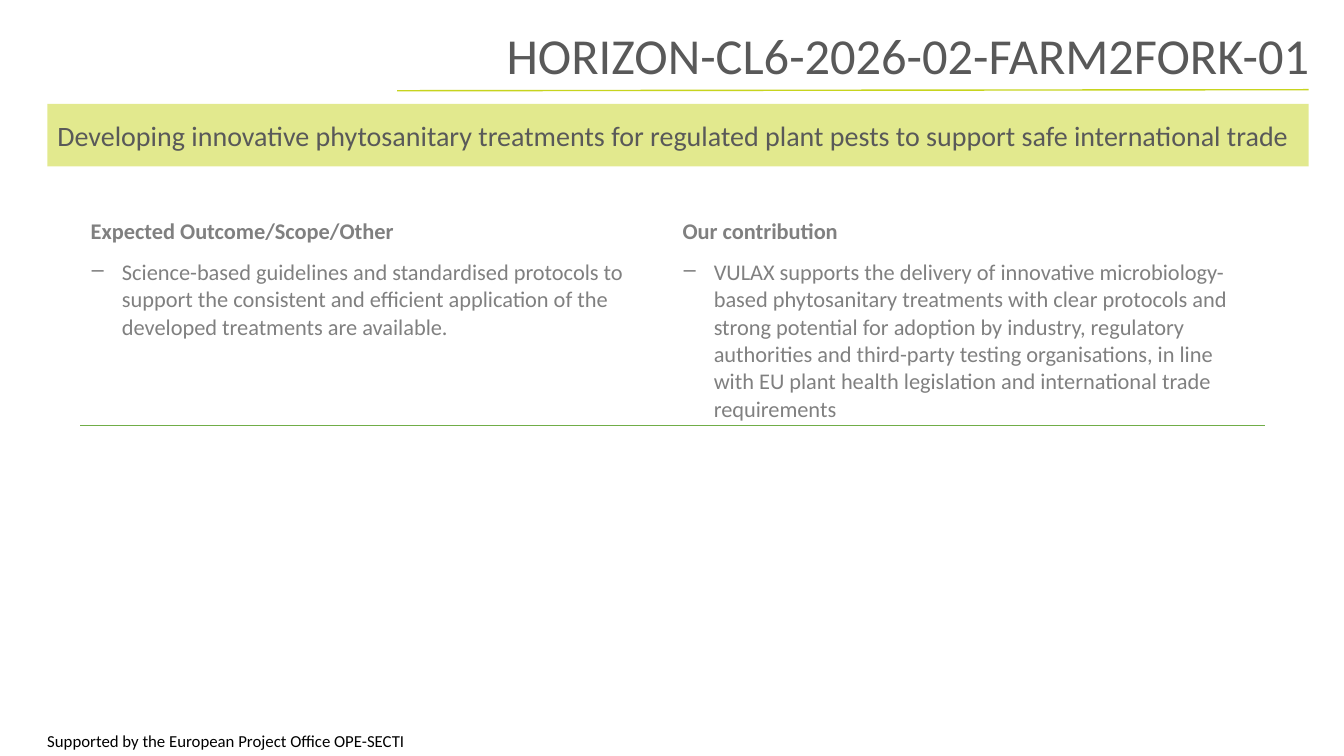
import dataclasses

import lxml.etree
import pptx
import pptx.dml.color
import pptx.enum.shapes
import pptx.enum.text
import pptx.oxml.ns
import pptx.util

EMU_PER_PX = 9144  # 100 px to the inch
ALIGN = pptx.enum.text.PP_ALIGN
ANCHOR = pptx.enum.text.MSO_ANCHOR


@dataclasses.dataclass(frozen=True)
class Theme:
    font: str = "Calibri"
    heading: str = "595959"
    body: str = "808080"
    footer: str = "000000"
    lime: str = "C7D41E"
    green: str = "70AD47"
    white: str = "FFFFFF"
    title_size: int = 36
    banner_size: int = 20
    body_size: int = 16
    footer_size: int = 12


THEME = Theme()

COLUMNS = [
    (
        "Expected Outcome/Scope/Other",
        "Science-based guidelines and standardised protocols to support the "
        "consistent and efficient application of the developed treatments are available.",
    ),
    (
        "Our contribution",
        "VULAX supports the delivery of innovative microbiology-based phytosanitary "
        "treatments with clear protocols and strong potential for adoption by industry, "
        "regulatory authorities and third-party testing organisations, in line with EU "
        "plant health legislation and international trade requirements",
    ),
]


def px(*lengths):
    return [pptx.util.Emu(length * EMU_PER_PX) for length in lengths]


def rgb(color):
    return pptx.dml.color.RGBColor.from_string(color)


def add_element(parent, tag, **attributes):
    return lxml.etree.SubElement(parent, pptx.oxml.ns.qn(tag), attributes)


def fill_translucent(fill, color, percent):
    fill.solid()
    fill.fore_color.rgb = rgb(color)
    color_element = fill._xPr.find(".//" + pptx.oxml.ns.qn("a:srgbClr"))
    add_element(color_element, "a:alpha", val=str(percent * 1000))


def write_text(text_frame, text, size, color, align=ALIGN.LEFT, bold=False,
               line_spacing=None, bullet=None):
    text_frame.word_wrap = True
    paragraph = text_frame.paragraphs[0]
    paragraph.text = text
    paragraph.alignment = align
    if line_spacing:
        paragraph.line_spacing = line_spacing
    if bullet:
        properties = paragraph._p.get_or_add_pPr()
        indent, = px(31)
        properties.set("marL", str(indent))
        properties.set("indent", str(-indent))
        add_element(properties, "a:buChar", char=bullet)
    paragraph.font.name = THEME.font
    paragraph.font.size = pptx.util.Pt(size)
    paragraph.font.bold = bold
    paragraph.font.color.rgb = rgb(color)


def add_label(slide, box, text, size, color, anchor=ANCHOR.TOP, **style):
    text_frame = slide.shapes.add_textbox(*px(*box)).text_frame
    text_frame.vertical_anchor = anchor
    write_text(text_frame, text, size, color, **style)


def add_rule(slide, ends, color):
    rule = slide.shapes.add_connector(
        pptx.enum.shapes.MSO_CONNECTOR.STRAIGHT, *px(*ends))
    rule.line.color.rgb = rgb(color)
    rule.line.width = pptx.util.Pt(1)
    add_element(rule._element.spPr, "a:effectLst")


def add_banner(slide, box, text):
    banner = slide.shapes.add_shape(
        pptx.enum.shapes.MSO_SHAPE.RECTANGLE, *px(*box))
    banner.shadow.inherit = False
    fill_translucent(banner.fill, THEME.lime, 50)
    banner.line.fill.background()
    banner.text_frame.vertical_anchor = ANCHOR.MIDDLE
    write_text(banner.text_frame, text, THEME.banner_size, THEME.heading)


def add_bottom_border(cell, color):
    properties = cell._tc.get_or_add_tcPr()
    border = add_element(properties, "a:lnB", w=str(pptx.util.Pt(1)))
    add_element(add_element(border, "a:solidFill"), "a:srgbClr", val=color)
    properties.insert(0, border)


def add_comparison(slide, box, row_heights, columns):
    table = slide.shapes.add_table(
        len(row_heights), len(columns), *px(*box)).table
    table.first_row = table.horz_banding = False
    for row, height in zip(table.rows, px(*row_heights)):
        row.height = height
    for index, (heading, detail) in enumerate(columns):
        heading_cell, detail_cell = table.cell(0, index), table.cell(1, index)
        heading_cell.fill.background()
        write_text(heading_cell.text_frame, heading,
                   THEME.body_size, THEME.body, bold=True)
        fill_translucent(detail_cell.fill, THEME.white, 20)
        add_bottom_border(detail_cell, THEME.green)
        write_text(detail_cell.text_frame, detail,
                   THEME.body_size, THEME.body, bullet="‒")


def main():
    presentation = pptx.Presentation()
    presentation.slide_width, presentation.slide_height = px(1333, 750)
    slide = presentation.slides.add_slide(presentation.slide_layouts[6])

    # Footer
    add_label(slide, (37, 718, 388, 32),
              "Supported by the European Project Office OPE-SECTI",
              THEME.footer_size, THEME.footer, line_spacing=1.1)

    # Title and topic
    add_rule(slide, (394, 90, 1298, 89), THEME.lime)
    add_label(slide, (384, 18, 925, 72), "HORIZON-CL6-2026-02-FARM2FORK-01",
              THEME.title_size, THEME.heading, anchor=ANCHOR.BOTTOM,
              align=ALIGN.RIGHT, line_spacing=0.9)
    add_banner(slide, (47, 103, 1251, 62),
               "Developing innovative phytosanitary treatments for regulated "
               "plant pests to support safe international trade")

    # Outcome and contribution
    add_comparison(slide, (80, 211, 1174, 211), (41, 170), COLUMNS)

    presentation.save("out.pptx")


if __name__ == "__main__":
    main()
